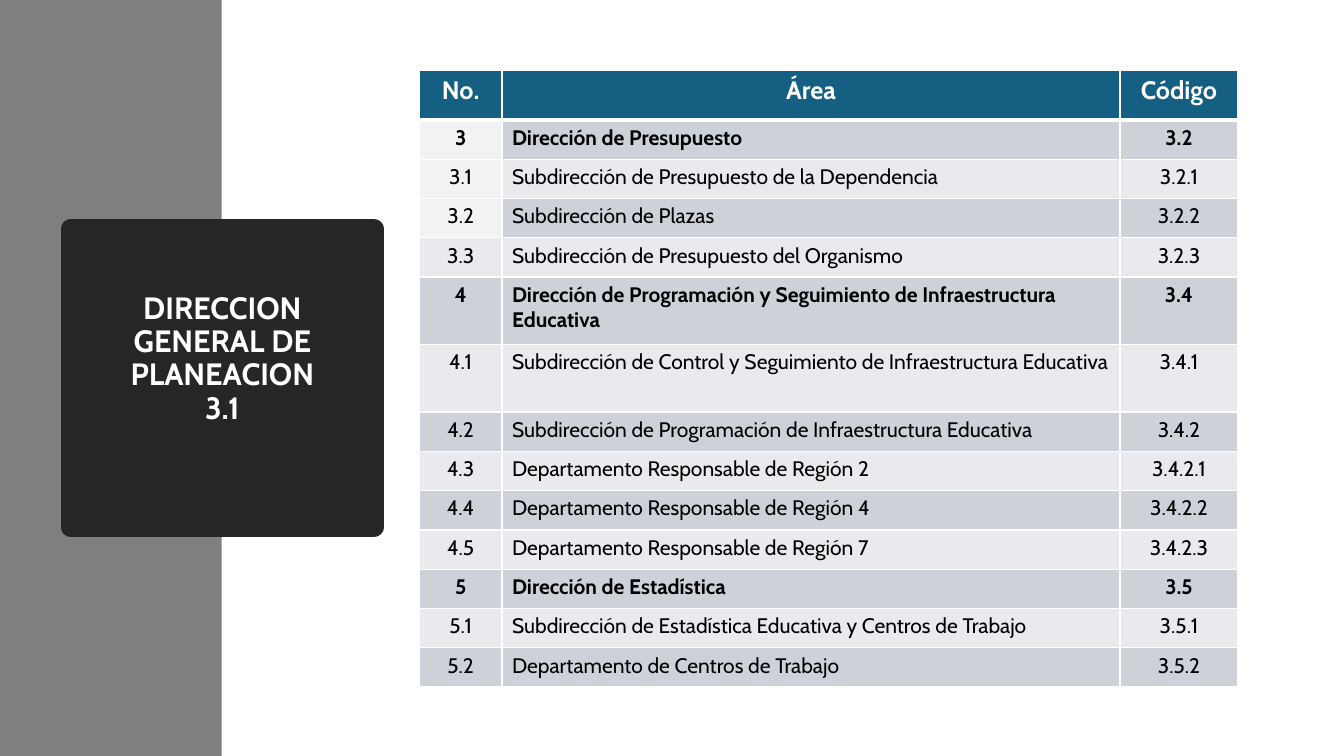
from lxml import etree
from pptx import Presentation
from pptx import util as u
from pptx.dml.color import RGBColor
from pptx.enum import shapes, text
from pptx.oxml.ns import qn

WIDTH, HEIGHT = 13.33, 7.5
FONT = "Cabin"
WHITE, BLACK, CHARCOAL, GREY = "FFFFFF", "000000", "262626", "7F7F7F"
HEADER_BLUE, DARK_BAND, LIGHT_BAND, PALE = "156082", "CCD2D8", "E8EAED", "F2F2F2"

COLUMN_WIDTHS = [0.82, 6.13, 1.17]
HEADER_HEIGHT, ROW_HEIGHT, TALL_HEIGHT = 0.49, 0.39, 0.67
TALL_ROWS = {"4", "4.1"}
PALE_NUMBERS = {"3", "3.1", "3.2"}
HEADINGS = ("No.", "Área", "Código")
AREAS = [
    ("3", "Dirección de Presupuesto", "3.2"),
    ("3.1", "Subdirección de Presupuesto de la Dependencia", "3.2.1"),
    ("3.2", "Subdirección de Plazas", "3.2.2"),
    ("3.3", "Subdirección de Presupuesto del Organismo", "3.2.3"),
    ("4", "Dirección de Programación y Seguimiento de Infraestructura Educativa", "3.4"),
    ("4.1", "Subdirección de Control y Seguimiento de Infraestructura Educativa", "3.4.1"),
    ("4.2", "Subdirección de Programación de Infraestructura Educativa", "3.4.2"),
    ("4.3", "Departamento Responsable de Región 2", "3.4.2.1"),
    ("4.4", "Departamento Responsable de Región 4", "3.4.2.2"),
    ("4.5", "Departamento Responsable de Región 7", "3.4.2.3"),
    ("5", "Dirección de Estadística", "3.5"),
    ("5.1", "Subdirección de Estadística Educativa y Centros de Trabajo", "3.5.1"),
    ("5.2", "Departamento de Centros de Trabajo", "3.5.2"),
]


def paint(fill, color):
    fill.solid()
    fill.fore_color.rgb = RGBColor.from_string(color)


def format_text(paragraph, size, color, bold, align):
    paragraph.alignment = align
    for run in paragraph.runs:
        run.font.name = FONT
        run.font.size = u.Pt(size)
        run.font.bold = bold
        run.font.color.rgb = RGBColor.from_string(color)


def add_block(slide, left, top, width, height, color):
    """Add a plain rectangle; lengths are shares of the slide."""
    block = slide.shapes.add_shape(
        shapes.MSO_SHAPE.RECTANGLE,
        u.Inches(left * WIDTH), u.Inches(top * HEIGHT),
        u.Inches(width * WIDTH), u.Inches(height * HEIGHT))
    block.shadow.inherit = False
    paint(block.fill, color)
    block.line.fill.background()
    return block


def add_title(slide):
    title = add_block(slide, 0.0525, 0.3027, 0.2258, 0.3947, CHARCOAL)
    paint(title.line.fill, CHARCOAL)
    title.line.width = u.Pt(13.75)
    etree.SubElement(title.line._get_or_add_ln(), qn("a:round"))
    frame = title.text_frame
    frame.word_wrap = True
    frame.vertical_anchor = text.MSO_ANCHOR.MIDDLE
    frame.margin_bottom = u.Inches(0.42)
    frame.text = "DIRECCION GENERAL DE PLANEACION\v3.1"
    frame.paragraphs[0].line_spacing = 0.9
    format_text(frame.paragraphs[0], 22, WHITE, True, text.PP_ALIGN.CENTER)


def set_borders(cell, bottom):
    """Draw white cell borders, 1 pt except for the given bottom width."""
    properties = cell._tc.get_or_add_tcPr()
    sides = {"a:lnL": 1, "a:lnR": 1, "a:lnT": 1, "a:lnB": bottom}
    for position, (side, points) in enumerate(sides.items()):
        border = etree.Element(qn(side), w=str(u.Pt(points)))
        color = etree.SubElement(etree.SubElement(border, qn("a:solidFill")), qn("a:srgbClr"))
        color.set("val", WHITE)
        properties.insert(position, border)


def band_color(row, column, number):
    if row == 0:
        return HEADER_BLUE
    if column == 0 and number in PALE_NUMBERS:
        return PALE
    return DARK_BAND if row % 2 else LIGHT_BAND


def add_area_table(slide):
    rows = [HEADINGS] + AREAS
    heights = [HEADER_HEIGHT] + [
        TALL_HEIGHT if number in TALL_ROWS else ROW_HEIGHT for number, _, _ in AREAS]
    table = slide.shapes.add_table(
        len(rows), len(HEADINGS), u.Inches(0.312 * WIDTH), u.Inches(0.0933 * HEIGHT),
        u.Inches(sum(COLUMN_WIDTHS)), u.Inches(sum(heights))).table
    for column, width in zip(table.columns, COLUMN_WIDTHS):
        column.width = u.Inches(width)
    for r, (values, height) in enumerate(zip(rows, heights)):
        table.rows[r].height = u.Inches(height)
        is_header = r == 0
        is_direction = "." not in values[0]
        for c, value in enumerate(values):
            cell = table.cell(r, c)
            cell.text_frame.text = value
            centred = is_header or c != 1
            format_text(
                cell.text_frame.paragraphs[0],
                18 if is_header else 15,
                WHITE if is_header else BLACK,
                is_header or is_direction,
                text.PP_ALIGN.CENTER if centred else text.PP_ALIGN.LEFT)
            paint(cell.fill, band_color(r, c, values[0]))
            set_borders(cell, 3 if is_header else 1)


def main():
    deck = Presentation()
    deck.slide_width, deck.slide_height = u.Inches(WIDTH), u.Inches(HEIGHT)
    slide = deck.slides.add_slide(deck.slide_layouts[6])
    add_block(slide, 0, 0, 0.165, 1, GREY)
    add_title(slide)
    add_area_table(slide)
    deck.save("out.pptx")


if __name__ == "__main__":
    main()
